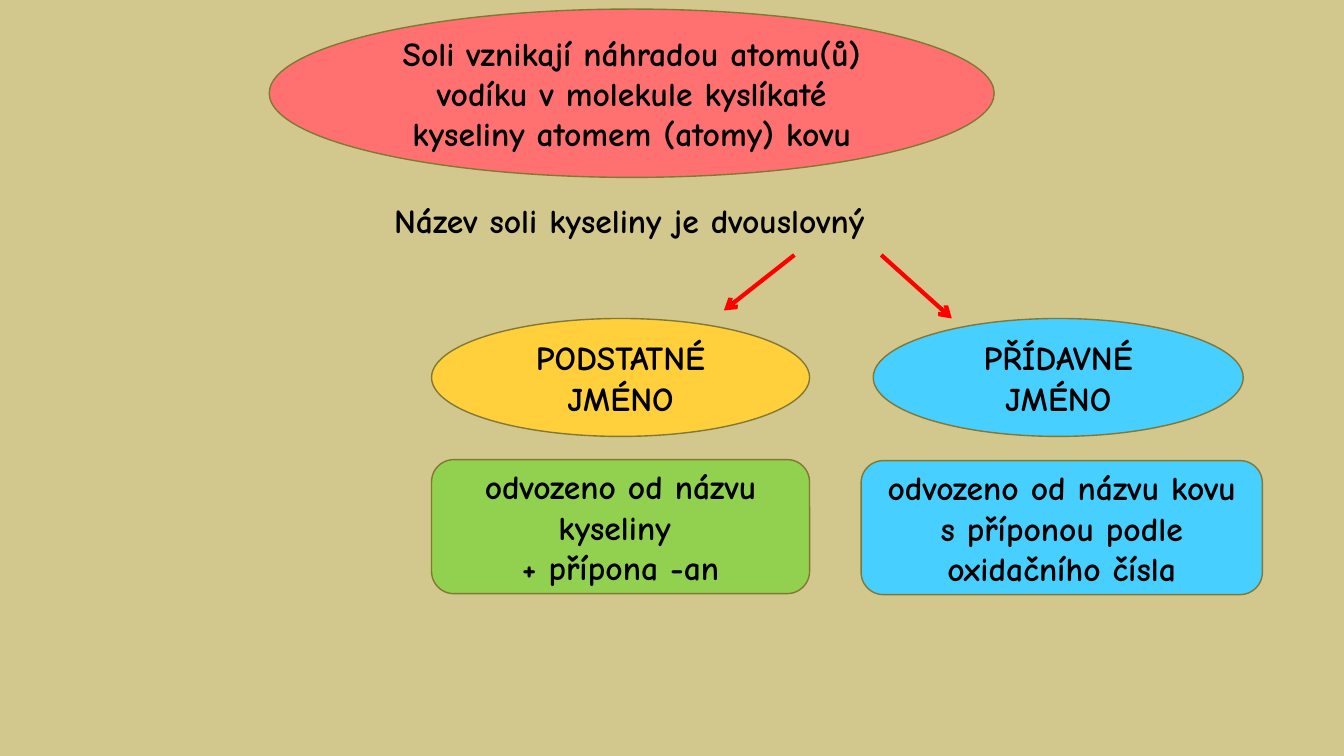
import pptx
import pptx.util
import pptx.dml.color
import pptx.enum.shapes
import pptx.enum.text
import pptx.oxml
import pptx.oxml.ns

COLORS = {
    "background": "D2C88D", "text": "000000", "outline": "827733", "arrow": "FF0000",
    "red": "FF7171", "yellow": "FFD03B", "blue": "47CFFF", "green": "92D050",
}
ELLIPSE = pptx.enum.shapes.MSO_SHAPE.OVAL
ROUNDED = pptx.enum.shapes.MSO_SHAPE.ROUNDED_RECTANGLE

presentation = pptx.Presentation()
presentation.slide_width = pptx.util.Inches(13.33)
presentation.slide_height = pptx.util.Inches(7.5)
slide = presentation.slides.add_slide(presentation.slide_layouts[6])

# Grid of 100 columns and 100 rows
column = presentation.slide_width / 100
row = presentation.slide_height / 100


def place(left, top, width, height):
    return [round(n) for n in (left * column, top * row, width * column, height * row)]


def write(shape, text, alignment):
    text_frame = shape.text_frame
    text_frame.text = text
    text_frame.word_wrap = True
    for paragraph in text_frame.paragraphs:
        paragraph.alignment = alignment
        for run in paragraph.runs:
            run.font.name = "Comic Neue"
            run.font.size = pptx.util.Pt(24)
            run.font.bold = True
            run.font.color.rgb = pptx.dml.color.RGBColor.from_string(COLORS["text"])


# Background
slide.background.fill.solid()
slide.background.fill.fore_color.rgb = pptx.dml.color.RGBColor.from_string(COLORS["background"])

# Statement about the two-word name
statement = slide.shapes.add_textbox(*place(28.58, 25.73, 42.84, 6.67))
write(statement, "Název soli kyseliny je dvouslovný", pptx.enum.text.PP_ALIGN.LEFT)

# Definition, the two parts of the name and their explanations
bubbles = [
    (ELLIPSE, "red", (20.03, 1.2, 53.94, 22.27),
     "Soli vznikají náhradou atomu(ů) vodíku v molekule kyslíkaté kyseliny atomem (atomy) kovu"),
    (ELLIPSE, "yellow", (32.11, 42.13, 28.13, 15.6), "PODSTATNÉ JMÉNO"),
    (ELLIPSE, "blue", (64.97, 42.13, 27.53, 15.6), "PŘÍDAVNÉ JMÉNO"),
    (ROUNDED, "green", (32.11, 60.8, 28.13, 17.73), "odvozeno od názvu kyseliny \n+ přípona -an"),
    (ROUNDED, "blue", (64.07, 60.93, 29.86, 17.73),
     "odvozeno od názvu kovu s příponou podle oxidačního čísla"),
]
for kind, color, area, text in bubbles:
    shape = slide.shapes.add_shape(kind, *place(*area))
    shape.shadow.inherit = False
    shape.fill.solid()
    shape.fill.fore_color.rgb = pptx.dml.color.RGBColor.from_string(COLORS[color])
    shape.line.color.rgb = pptx.dml.color.RGBColor.from_string(COLORS["outline"])
    shape.line.width = pptx.util.Pt(1)
    shape.text_frame.vertical_anchor = pptx.enum.text.MSO_ANCHOR.MIDDLE
    write(shape, text, pptx.enum.text.PP_ALIGN.CENTER)

# Arrows from the statement to the two parts of the name
for ends in [(59.11, 33.73, 53.86, 41.07), (65.57, 33.73, 70.82, 42.13)]:
    arrow = slide.shapes.add_connector(pptx.enum.shapes.MSO_CONNECTOR.STRAIGHT, *place(*ends))
    arrow.line.color.rgb = pptx.dml.color.RGBColor.from_string(COLORS["arrow"])
    arrow.line.width = pptx.util.Pt(3)
    head = pptx.oxml.parse_xml(f'<a:tailEnd {pptx.oxml.ns.nsdecls("a")} type="arrow"/>')
    arrow.line._get_or_add_ln().append(head)
    properties = arrow._element.spPr
    properties.append(pptx.oxml.parse_xml(f'<a:effectLst {pptx.oxml.ns.nsdecls("a")}/>'))

presentation.save("out.pptx")
